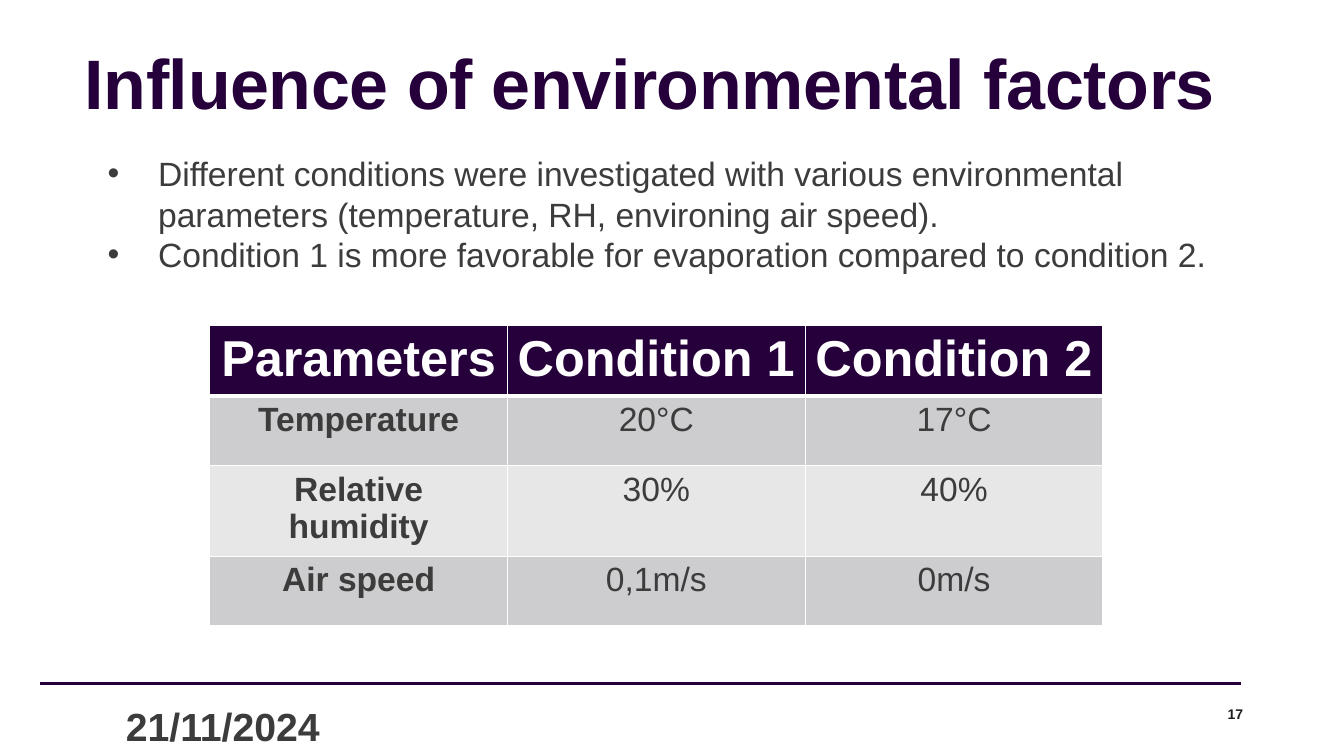
from lxml.etree import SubElement
from pptx import Presentation
from pptx.dml.color import RGBColor
from pptx.enum.shapes import MSO_CONNECTOR
from pptx.enum.text import MSO_ANCHOR, PP_ALIGN
from pptx.oxml.ns import qn
from pptx.util import Inches, Pt

PURPLE = RGBColor(0x26, 0x00, 0x3B)
GREY = RGBColor(0x3C, 0x3C, 0x3C)
BLACK = RGBColor(0x1E, 0x1E, 0x1E)
WHITE = RGBColor(0xFF, 0xFF, 0xFF)
DARK_BAND = RGBColor(0xCD, 0xCC, 0xCE)
LIGHT_BAND = RGBColor(0xE8, 0xE7, 0xE8)

BULLETS = [
    "Different conditions were investigated with various environmental "
    "parameters (temperature, RH, environing air speed).",
    "Condition 1 is more favorable for evaporation compared to condition 2.",
]
CONDITIONS = [
    ["Parameters", "Condition 1", "Condition 2"],
    ["Temperature", "20°C", "17°C"],
    ["Relative humidity", "30%", "40%"],
    ["Air speed", "0,1m/s", "0m/s"],
]


def add_span(para, text, size, color, bold=False):
    span = para.add_run()
    span.text = text
    span.font.name = "Arial"
    span.font.size = Pt(size)
    span.font.bold = bold
    span.font.color.rgb = color
    return span


def add_frame(page, box, margins=True, anchor=MSO_ANCHOR.TOP):
    """Add a wrapping text box at (left, top, width, height) in inches."""
    frame = page.shapes.add_textbox(*map(Inches, box)).text_frame
    frame.word_wrap = True
    frame.vertical_anchor = anchor
    if not margins:
        frame.margin_left = frame.margin_right = 0
        frame.margin_top = frame.margin_bottom = 0
    return frame


def add_title(page, box):
    para = add_frame(page, box, False, MSO_ANCHOR.BOTTOM).paragraphs[0]
    para.line_spacing = 0.9
    span = add_span(para, "Influence of environmental factors", 50, PURPLE, True)
    span.font._element.set("spc", "-30")


def add_bullets(page, box):
    frame = add_frame(page, box)
    for index, text in enumerate(BULLETS):
        para = frame.add_paragraph() if index else frame.paragraphs[0]
        properties = para._p.get_or_add_pPr()
        properties.set("marL", str(Inches(0.5)))
        properties.set("indent", str(Inches(-0.5)))
        SubElement(properties, qn("a:buFont"), typeface="Arial")
        SubElement(properties, qn("a:buChar"), char="•")
        add_span(para, text, 24, GREY)


def add_borders(cell, top, bottom):
    """Draw white cell edges; must run before the cell is filled."""
    properties = cell._tc.get_or_add_tcPr()
    for side, width in (("L", 1), ("R", 1), ("T", top), ("B", bottom)):
        line = SubElement(properties, qn(f"a:ln{side}"), w=str(Pt(width)))
        fill = SubElement(line, qn("a:solidFill"))
        SubElement(fill, qn("a:srgbClr"), val=str(WHITE))


def add_conditions_table(page, box):
    rows, columns = len(CONDITIONS), len(CONDITIONS[0])
    left, top, width, height = map(Inches, box)
    table = page.shapes.add_table(rows, columns, left, top, width, height).table
    for row_index, texts in enumerate(CONDITIONS):
        header = row_index == 0
        band = DARK_BAND if row_index % 2 else LIGHT_BAND
        for column_index, text in enumerate(texts):
            cell = table.cell(row_index, column_index)
            add_borders(cell, 3 if row_index == 1 else 1, 3 if header else 1)
            cell.fill.solid()
            cell.fill.fore_color.rgb = PURPLE if header else band
            para = cell.text_frame.paragraphs[0]
            para.alignment = PP_ALIGN.CENTER
            add_span(para, text, 36 if header else 24, WHITE if header else GREY,
                     header or column_index == 0)


def add_footer(page, box):
    """Add the rule along the top of the box, with date and page number below."""
    left, top, width, height = box
    rule = page.shapes.add_connector(
        MSO_CONNECTOR.STRAIGHT, *map(Inches, (left, top, left + width, top)))
    rule.line.color.rgb = PURPLE
    rule.line.width = Pt(2.25)
    SubElement(rule._element.spPr, qn("a:effectLst"))

    date = add_frame(page, (left + 0.75, top + 0.14, 3.06, 0.4))
    add_span(date.paragraphs[0], "21/11/2024", 28, GREY, True)

    number_box = (left + width - 0.52, top + 0.18, 0.54, 0.24)
    number = add_frame(page, number_box, False, MSO_ANCHOR.MIDDLE).paragraphs[0]
    number.alignment = PP_ALIGN.RIGHT
    add_span(number, "17", 10, BLACK, True)


def main():
    deck = Presentation()
    deck.slide_width, deck.slide_height = Inches(13.33), Inches(7.5)
    page = deck.slides.add_slide(deck.slide_layouts[6])
    add_title(page, (0.84, 0.5, 11.5, 0.74))
    add_bullets(page, (0.97, 1.47, 11.23, 1.31))
    add_conditions_table(page, (2.08, 3.23, 8.86, 2.76))
    add_footer(page, (0.4, 6.78, 11.91, 0.72))
    deck.save("out.pptx")


if __name__ == "__main__":
    main()
